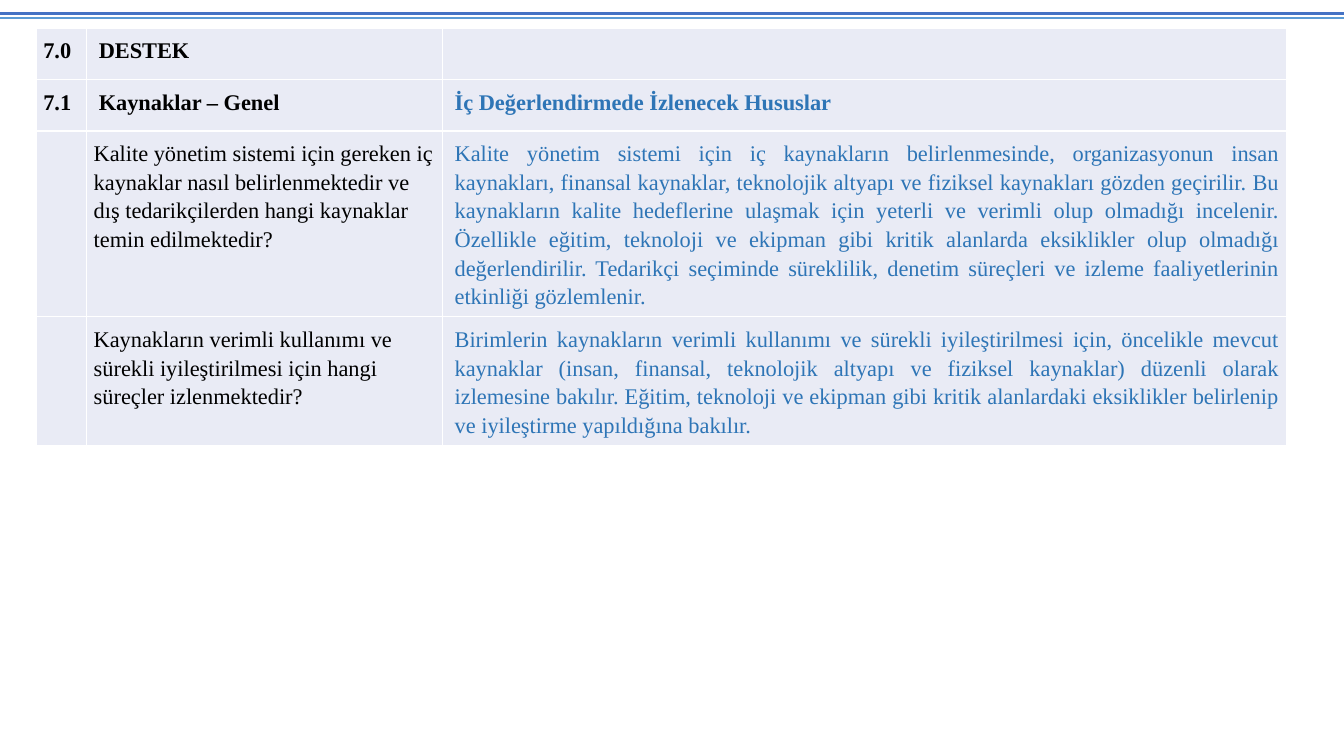
from dataclasses import dataclass

from lxml.etree import SubElement
from pptx import Presentation
from pptx.dml.color import RGBColor
from pptx.enum.shapes import MSO_CONNECTOR
from pptx.enum.text import MSO_ANCHOR, PP_ALIGN
from pptx.oxml.ns import qn
from pptx.util import Inches, Pt


@dataclass(frozen=True)
class Theme:
    font: str = "Times New Roman"
    text_size: float = 16
    line_spacing: float = 1.15
    question: str = "000000"
    guidance: str = "2E75B6"
    cell_fill: str = "E9EBF5"
    border: str = "FFFFFF"
    border_width: float = 1
    thin_rule: str = "5B9BD5"
    thick_rule: str = "4472C4"


@dataclass(frozen=True)
class HeaderRule:
    top: float
    color: str
    width: float


@dataclass(frozen=True)
class ClauseRow:
    height: float
    number: str = ""
    question: str = ""
    guidance: str = ""
    bold: bool = False


THEME = Theme()
SLIDE_WIDTH, SLIDE_HEIGHT = 13.33, 7.5
TABLE_LEFT, TABLE_TOP = 0.36, 0.28
COLUMN_WIDTHS = (0.5, 3.53, 8.37)
CELL_MARGIN = 0.07
TEXT_INDENT = 0.05

HEADER_RULES = (
    HeaderRule(0.18, THEME.thin_rule, 1),
    HeaderRule(0.13, THEME.thick_rule, 2.25),
)

CLAUSE_ROWS = (
    ClauseRow(0.51, "7.0", "DESTEK", bold=True),
    ClauseRow(0.51, "7.1", "Kaynaklar – Genel",
              "İç Değerlendirmede İzlenecek Hususlar", bold=True),
    ClauseRow(
        1.84,
        question="Kalite yönetim sistemi için gereken iç kaynaklar nasıl "
                 "belirlenmektedir ve dış tedarikçilerden hangi kaynaklar "
                 "temin edilmektedir?",
        guidance="Kalite yönetim sistemi için iç kaynakların belirlenmesinde, "
                 "organizasyonun insan kaynakları, finansal kaynaklar, "
                 "teknolojik altyapı ve fiziksel kaynakları gözden geçirilir. "
                 "Bu kaynakların kalite hedeflerine ulaşmak için yeterli ve "
                 "verimli olup olmadığı incelenir. Özellikle eğitim, teknoloji "
                 "ve ekipman gibi kritik alanlarda eksiklikler olup olmadığı "
                 "değerlendirilir. Tedarikçi seçiminde süreklilik, denetim "
                 "süreçleri ve izleme faaliyetlerinin etkinliği gözlemlenir."),
    ClauseRow(
        1.27,
        question="Kaynakların verimli kullanımı ve sürekli iyileştirilmesi "
                 "için hangi süreçler izlenmektedir?",
        guidance="Birimlerin kaynakların verimli kullanımı ve sürekli "
                 "iyileştirilmesi için, öncelikle mevcut kaynaklar (insan, "
                 "finansal, teknolojik altyapı ve fiziksel kaynaklar) düzenli "
                 "olarak izlemesine bakılır. Eğitim, teknoloji ve ekipman gibi "
                 "kritik alanlardaki eksiklikler belirlenip ve iyileştirme "
                 "yapıldığına bakılır."),
)


def draw_header_rule(slide, rule: HeaderRule) -> None:
    line = slide.shapes.add_connector(
        MSO_CONNECTOR.STRAIGHT, Inches(0), Inches(rule.top),
        Inches(SLIDE_WIDTH), Inches(rule.top))
    line.line.color.rgb = RGBColor.from_string(rule.color)
    line.line.width = Pt(rule.width)
    SubElement(line._element.spPr, qn("a:effectLst"))


def style_cell(cell) -> None:
    # Borders come before the fill in the cell properties
    properties = cell._tc.get_or_add_tcPr()
    for side in ("a:lnL", "a:lnR", "a:lnT", "a:lnB"):
        border = SubElement(properties, qn(side), w=str(Pt(THEME.border_width)))
        border_fill = SubElement(border, qn("a:solidFill"))
        SubElement(border_fill, qn("a:srgbClr"), val=THEME.border)
    cell.fill.solid()
    cell.fill.fore_color.rgb = RGBColor.from_string(THEME.cell_fill)
    cell.margin_left = cell.margin_right = Inches(CELL_MARGIN)
    cell.margin_top = cell.margin_bottom = Inches(CELL_MARGIN)
    cell.vertical_anchor = MSO_ANCHOR.TOP


def write_text(cell, text: str, *, color: str = THEME.question,
               bold: bool = False, align: PP_ALIGN = PP_ALIGN.LEFT,
               indent: float = 0) -> None:
    paragraph = cell.text_frame.paragraphs[0]
    paragraph.alignment = align
    paragraph.line_spacing = THEME.line_spacing
    paragraph._p.get_or_add_pPr().set("marL", str(Inches(indent)))
    paragraph.font.size = Pt(THEME.text_size)
    if not text:
        return
    run = paragraph.add_run()
    run.text = text
    run.font.name = THEME.font
    run.font.size = Pt(THEME.text_size)
    run.font.bold = bold
    run.font.color.rgb = RGBColor.from_string(color)


def draw_clause_table(slide, clauses: tuple[ClauseRow, ...]) -> None:
    table = slide.shapes.add_table(
        len(clauses), len(COLUMN_WIDTHS), Inches(TABLE_LEFT), Inches(TABLE_TOP),
        Inches(sum(COLUMN_WIDTHS)),
        Inches(sum(clause.height for clause in clauses))).table
    table.first_row = table.horz_banding = False
    for column, width in zip(table.columns, COLUMN_WIDTHS):
        column.width = Inches(width)
    for row, clause in zip(table.rows, clauses):
        row.height = Inches(clause.height)
        number, question, guidance = row.cells
        for cell in (number, question, guidance):
            style_cell(cell)
        write_text(number, clause.number, bold=clause.bold)
        write_text(question, clause.question, bold=clause.bold,
                   indent=TEXT_INDENT if clause.bold else 0)
        write_text(guidance, clause.guidance, color=THEME.guidance,
                   bold=clause.bold, align=PP_ALIGN.JUSTIFY, indent=TEXT_INDENT)


def main() -> None:
    presentation = Presentation()
    presentation.slide_width = Inches(SLIDE_WIDTH)
    presentation.slide_height = Inches(SLIDE_HEIGHT)
    slide = presentation.slides.add_slide(presentation.slide_layouts[6])

    # Double rule along the top edge
    for rule in HEADER_RULES:
        draw_header_rule(slide, rule)

    # Audit questions with their guidance
    draw_clause_table(slide, CLAUSE_ROWS)
    presentation.save("out.pptx")


if __name__ == "__main__":
    main()
